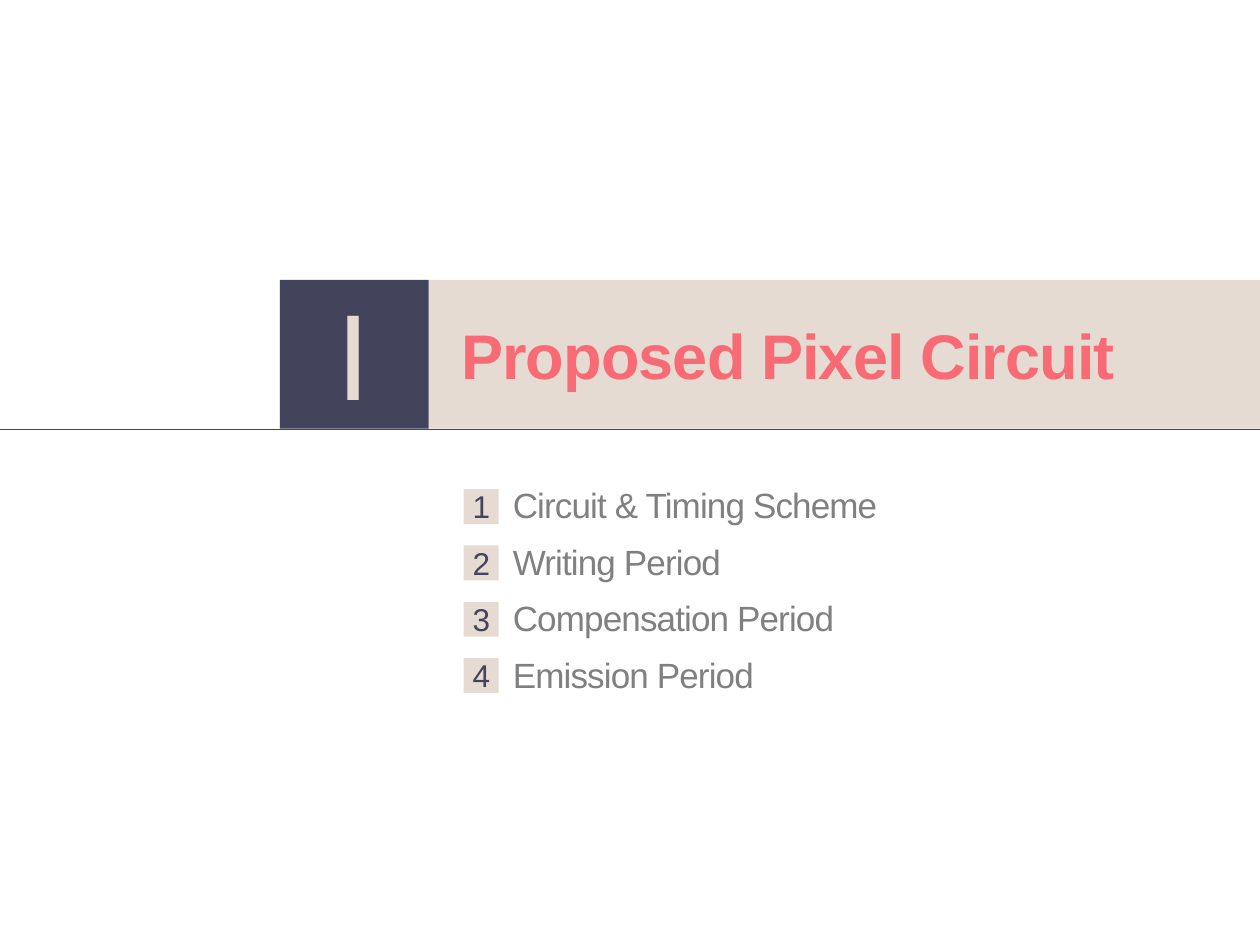
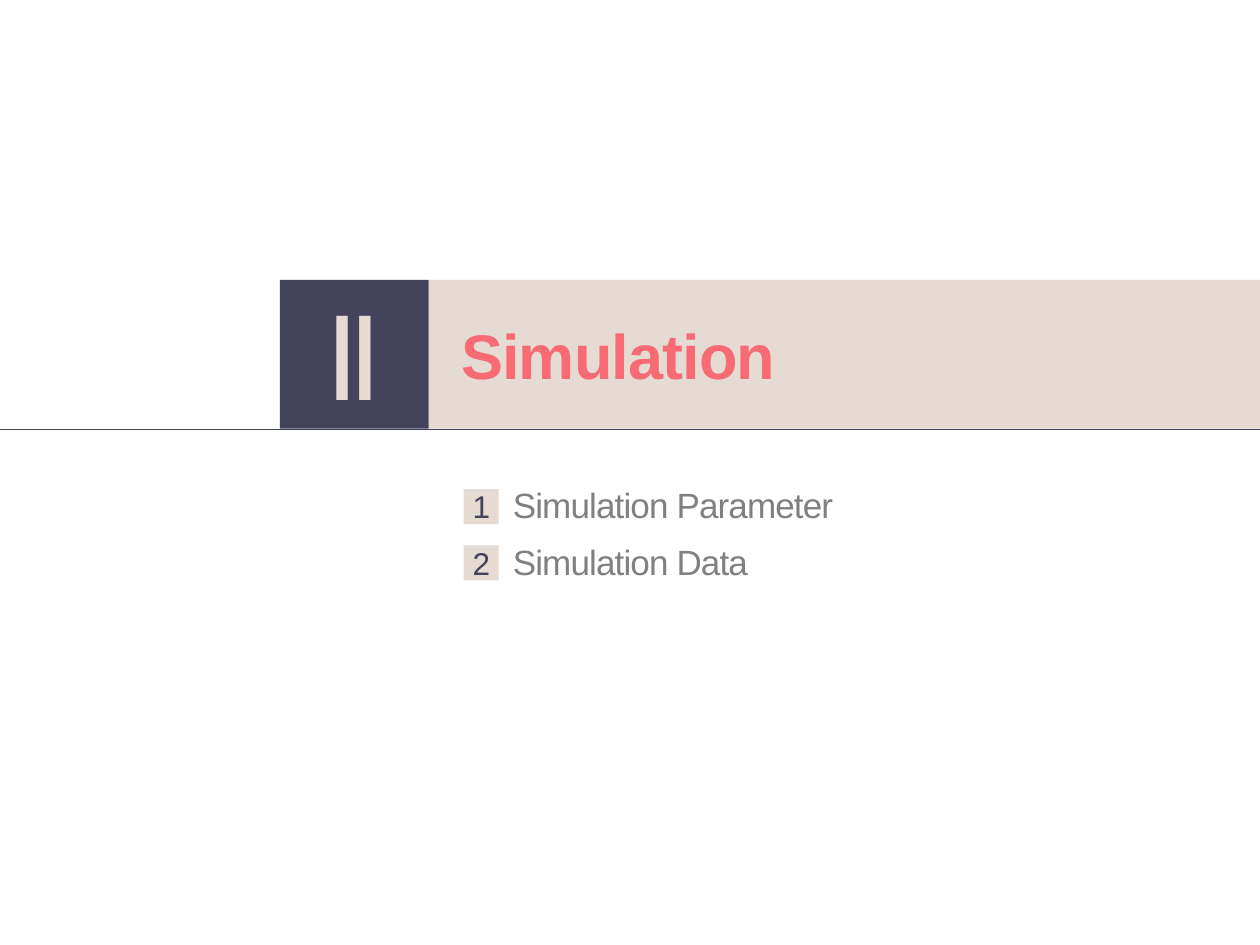
import dataclasses

import lxml.etree
import pptx
import pptx.dml.color
import pptx.enum.shapes
import pptx.enum.text
import pptx.oxml.ns
import pptx.util

Pt = pptx.util.Pt
qn = pptx.oxml.ns.qn
Align = pptx.enum.text.PP_ALIGN
Anchor = pptx.enum.text.MSO_ANCHOR


@dataclasses.dataclass(frozen=True)
class Theme:
    navy: str = "43435B"
    sand: str = "E5DBD2"
    coral: str = "F86B74"
    gray: str = "808080"
    font: str = "Arial"
    numeral_size: int = 66
    title_size: int = 36
    item_size: int = 20
    badge_size: int = 18
    letter_spacing: float = -0.5


THEME = Theme()

# Layout, in points
SLIDE_WIDTH, SLIDE_HEIGHT = 720, 540
BOX_LEFT, BOX_TOP, BOX_SIZE = 160, 160, 85
RULE_TOP = 245.5
ITEM_LEFT, ITEM_TOP, ITEM_PITCH = 286, 273, 32.2
BADGE_LEFT, BADGE_DROP, BADGE_SIZE = 265, 6.5, 20
TIGHT_INSETS = (3, 3, 3, 3.5)

SECTIONS = [
    ("Ⅰ", "Proposed Pixel Circuit",
     ["Circuit & Timing Scheme", "Writing Period", "Compensation Period", "Emission Period"]),
    ("Ⅱ", "Simulation", ["Simulation Parameter", "Simulation Data"]),
]


def color(value):
    return pptx.dml.color.RGBColor.from_string(value)


def write_text(shape, text, size, fill, bold=False, align=Align.LEFT, anchor=Anchor.TOP,
               insets=(7.2, 3.6, 7.2, 3.6), wrap=True, space_after=10, line_spacing=1.0):
    frame = shape.text_frame
    frame.auto_size = pptx.enum.text.MSO_AUTO_SIZE.NONE
    frame.word_wrap = wrap
    frame.vertical_anchor = anchor
    (frame.margin_left, frame.margin_top,
     frame.margin_right, frame.margin_bottom) = map(Pt, insets)
    paragraph = frame.paragraphs[0]
    paragraph.alignment = align
    paragraph.space_after = Pt(space_after)
    paragraph.line_spacing = line_spacing
    run = paragraph.add_run()
    run.text = text
    run.font.name = THEME.font
    run.font.size = Pt(size)
    run.font.bold = bold
    run.font.color.rgb = color(fill)
    # Letter spacing and the font for the Roman numeral characters
    properties = run._r.get_or_add_rPr()
    properties.set("spc", str(round(THEME.letter_spacing * 100)))
    lxml.etree.SubElement(properties, qn("a:ea")).set("typeface", THEME.font)


def add_rectangle(shapes, left, top, width, height, fill):
    shape = shapes.add_shape(pptx.enum.shapes.MSO_SHAPE.RECTANGLE,
                             Pt(left), Pt(top), Pt(width), Pt(height))
    shape.shadow.inherit = False
    shape.fill.solid()
    shape.fill.fore_color.rgb = color(fill)
    shape.line.fill.background()
    return shape


def add_rule(shapes, top):
    rule = shapes.add_connector(pptx.enum.shapes.MSO_CONNECTOR.STRAIGHT,
                                0, Pt(top), Pt(SLIDE_WIDTH), Pt(top))
    rule.line.color.rgb = color(THEME.navy)
    rule.line.width = Pt(0.5)
    lxml.etree.SubElement(rule.element.spPr, qn("a:effectLst"))
    return rule


def move_band_to_layout(slide):
    """Draw the shared band and rule, then hand them to the slide's layout."""
    band_left = BOX_LEFT + BOX_SIZE
    band = [
        add_rule(slide.shapes, RULE_TOP),
        add_rectangle(slide.shapes, band_left, BOX_TOP, SLIDE_WIDTH - band_left,
                      BOX_SIZE, THEME.sand),
        add_rectangle(slide.shapes, BOX_LEFT, BOX_TOP, BOX_SIZE, BOX_SIZE, THEME.navy),
    ]
    for number, shape in enumerate(band, start=101):
        shape.element.xpath(".//p:cNvPr")[0].set("id", str(number))
        slide.slide_layout.shapes.element.append(shape.element)


def add_title(slide, text):
    title = slide.shapes.title
    title.left, title.top, title.width, title.height = map(Pt, (256.3, 164.2, 456.5, 82))
    write_text(title, text, THEME.title_size, THEME.coral, bold=True,
               anchor=Anchor.MIDDLE, space_after=0, line_spacing=0.9)


def add_numeral(slide, numeral):
    box = slide.shapes.add_textbox(Pt(165), Pt(172), Pt(74), Pt(61))
    write_text(box, numeral, THEME.numeral_size, THEME.sand, align=Align.CENTER,
               anchor=Anchor.MIDDLE, insets=TIGHT_INSETS, wrap=False)


def add_item(slide, index, text):
    top = ITEM_TOP + index * ITEM_PITCH
    item = slide.shapes.add_group_shape()
    label = item.shapes.add_textbox(Pt(ITEM_LEFT), Pt(top), Pt(283), Pt(31.5))
    write_text(label, text, THEME.item_size, THEME.gray)
    badge = add_rectangle(item.shapes, BADGE_LEFT, top + BADGE_DROP,
                          BADGE_SIZE, BADGE_SIZE, THEME.sand)
    write_text(badge, str(index + 1), THEME.badge_size, THEME.navy, align=Align.CENTER,
               anchor=Anchor.MIDDLE, insets=TIGHT_INSETS, wrap=False)


def main():
    presentation = pptx.Presentation()
    presentation.slide_width = Pt(SLIDE_WIDTH)
    presentation.slide_height = Pt(SLIDE_HEIGHT)
    title_only = presentation.slide_layouts[5]

    for section, (numeral, title, items) in enumerate(SECTIONS):
        slide = presentation.slides.add_slide(title_only)
        if section == 0:
            move_band_to_layout(slide)
        add_title(slide, title)
        add_numeral(slide, numeral)
        for index, text in enumerate(items):
            add_item(slide, index, text)

    presentation.save("out.pptx")


if __name__ == "__main__":
    main()
